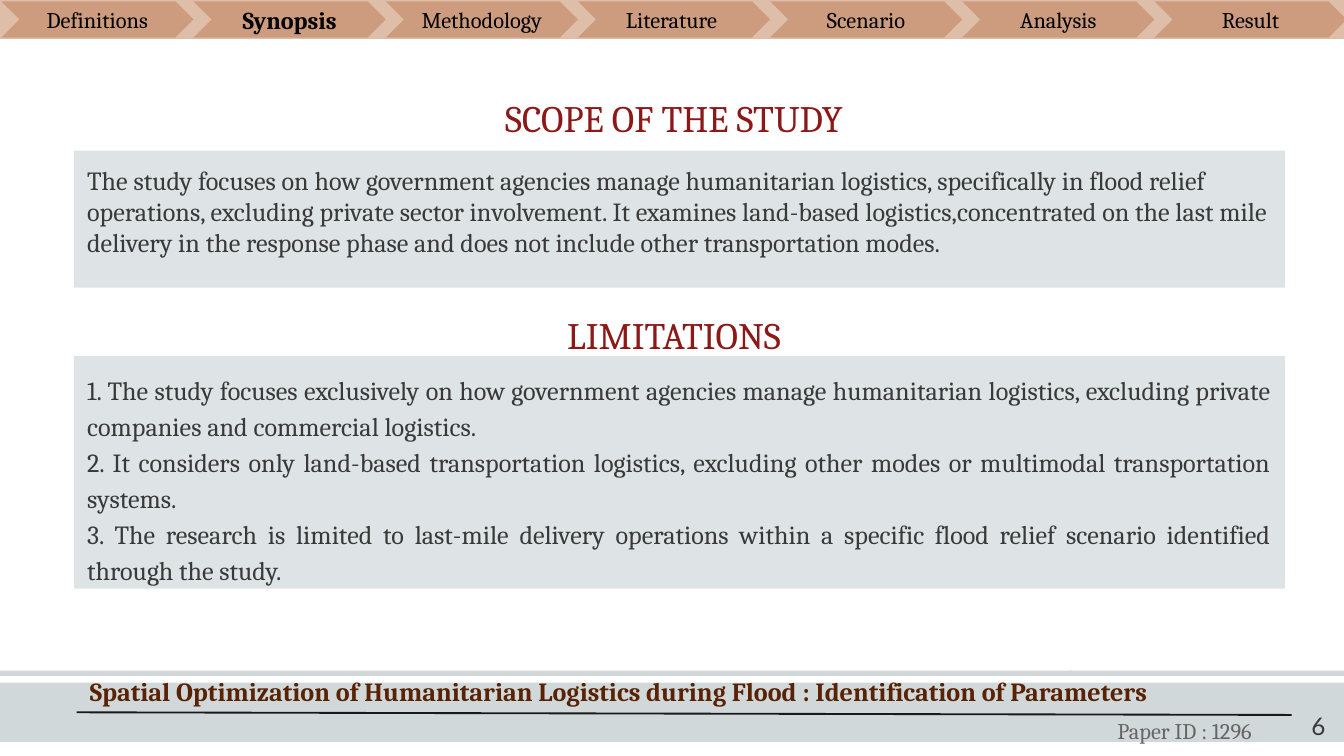
from pptx import Presentation
from pptx.dml.color import RGBColor
from pptx.enum.shapes import MSO_CONNECTOR as Conn, MSO_SHAPE as Shp
from pptx.enum.text import MSO_ANCHOR as Anc, MSO_AUTO_SIZE as Fit, PP_ALIGN as Al
from pptx.oxml.ns import qn
from pptx.util import Inches, Pt
from lxml import etree

CLAY, MIST, INK, RED = "BE7D55", "D0D8DA", "393939", "8C1818"
BODY = {"size": Pt(14), "name": "Cambria"}
HEAD = {"size": Pt(20), "name": "Cambria"}

STEPS = ["Definitions", "Synopsis", "Methodology", "Literature ",
         "Scenario", "Analysis", "Result"]
ACTIVE = "Synopsis"
SCOPE = [
    "The study focuses on how government agencies manage humanitarian "
    "logistics, specifically in flood relief operations, excluding private "
    "sector involvement. It examines land-based logistics,concentrated on the "
    "last mile delivery in the response phase and does not include other "
    "transportation modes."]
LIMITS = [
    "1. The study focuses exclusively on how government agencies manage "
    "humanitarian logistics, excluding private companies and commercial "
    "logistics.",
    "2. It considers only land-based transportation logistics, excluding other "
    "modes or multimodal transportation systems.",
    "3. The research is limited to last-mile delivery operations within a "
    "specific flood relief scenario identified through the study."]


def rgb(code):
    return RGBColor.from_string(code)


def write(shape, lines, font, color, align=Al.LEFT, anchor=Anc.TOP,
          pad=0.1, gap=None):
    frame = shape.text_frame
    look = {"word_wrap": True, "auto_size": Fit.NONE, "vertical_anchor": anchor,
            "margin_left": Inches(0.1), "margin_right": Inches(0.1),
            "margin_top": Inches(pad), "margin_bottom": Inches(pad)}
    for key, val in look.items():
        setattr(frame, key, val)
    for i, line in enumerate(lines):
        par = frame.add_paragraph() if i else frame.paragraphs[0]
        par.alignment = align
        if gap:
            par.line_spacing = gap
        run = par.add_run()
        run.text = line
        for key, val in font.items():
            setattr(run.font, key, val)
        run.font.color.rgb = rgb(color)


def block(slide, box, color, alpha=100, kind=Shp.RECTANGLE):
    shape = slide.shapes.add_shape(kind, *map(Inches, box))
    shape.shadow.inherit = False
    shape.line.fill.background()
    shape.fill.solid()
    shape.fill.fore_color.rgb = rgb(color)
    if alpha < 100:
        tint = shape.fill._xPr.find(".//" + qn("a:srgbClr"))
        etree.SubElement(tint, qn("a:alpha")).set("val", str(alpha * 1000))
    return shape


def label(slide, box, text, font, color, **look):
    shape = slide.shapes.add_textbox(*map(Inches, box))
    write(shape, [text], font, color, **look)


def footer(slide, box):
    x, y, w, h = box
    for left, top, wide, high in ((0, 0.1, w, 0.44), (0, 0.01, 7.98, 0.04),
                                  (7.95, 0.01, 2.05, 0.04)):
        block(slide, (x + left, y + top, wide, high), MIST)
    rule = slide.shapes.add_connector(
        Conn.STRAIGHT, *map(Inches, (x + 0.57, y + 0.32, x + 9.61, y + 0.34)))
    rule.line.color.rgb = rgb("191919")
    rule.line.width = Pt(1)
    etree.SubElement(rule._element.spPr, qn("a:effectLst"))
    label(slide, (x + 0.57, y, 9.03, 0.34),
          "Spatial Optimization of Humanitarian Logistics during Flood : "
          "Identification of Parameters", {**BODY, "bold": True}, "592203",
          pad=0.05)
    label(slide, (x + 7.95, y + 0.31, 1.73, 0.3), "Paper ID : 1296",
          {**BODY, "size": Pt(12)}, "666666", align=Al.CENTER, pad=0.05)
    label(slide, (x + 9.36, y + 0.21, 0.6, h - 0.21), "6",
          {"size": Pt(13), "name": "Lato"}, INK, align=Al.RIGHT)


def steps(slide, box):
    x, y, w, h = box
    block(slide, box, CLAY, 50)
    pitch = 1.43
    for i, name in enumerate(STEPS):
        on = name == ACTIVE
        part = block(slide, (x + 0.01 + i * pitch, y + 0.01, pitch, h - 0.02),
                     CLAY, 50, Shp.CHEVRON)
        part.adjustments[0] = 0.5
        font = {**BODY, "size": Pt(13 if on else 12), "bold": on}
        write(part, [name], font, "000000", Al.CENTER, Anc.MIDDLE)


def panel(slide, box, lines, **look):
    write(block(slide, box, MIST, 70), lines, BODY, INK, **look)


def title(slide, box, text):
    shape = slide.shapes.title
    for key, val in zip(("left", "top", "width", "height"), box):
        setattr(shape, key, Inches(val))
    write(shape, [text], HEAD, RED, Al.CENTER)


def main():
    deck = Presentation()
    deck.slide_width = Inches(10)
    deck.slide_height = deck.slide_width * 9 // 16
    slide = deck.slides.add_slide(deck.slide_layouts[5])
    footer(slide, (0, 4.98, 10, 0.64))
    steps(slide, (0, 0, 10, 0.29))
    title(slide, (0.01, 0.61, 10.01, 0.51), "SCOPE OF THE STUDY")
    panel(slide, (0.55, 1.12, 9.01, 1.02), SCOPE)
    label(slide, (0.01, 2.22, 10.01, 0.43), "LIMITATIONS", HEAD, RED,
          align=Al.CENTER)
    panel(slide, (0.55, 2.65, 9.01, 1.73), LIMITS, align=Al.JUSTIFY, gap=1.15)
    deck.save("out.pptx")


if __name__ == "__main__":
    main()
